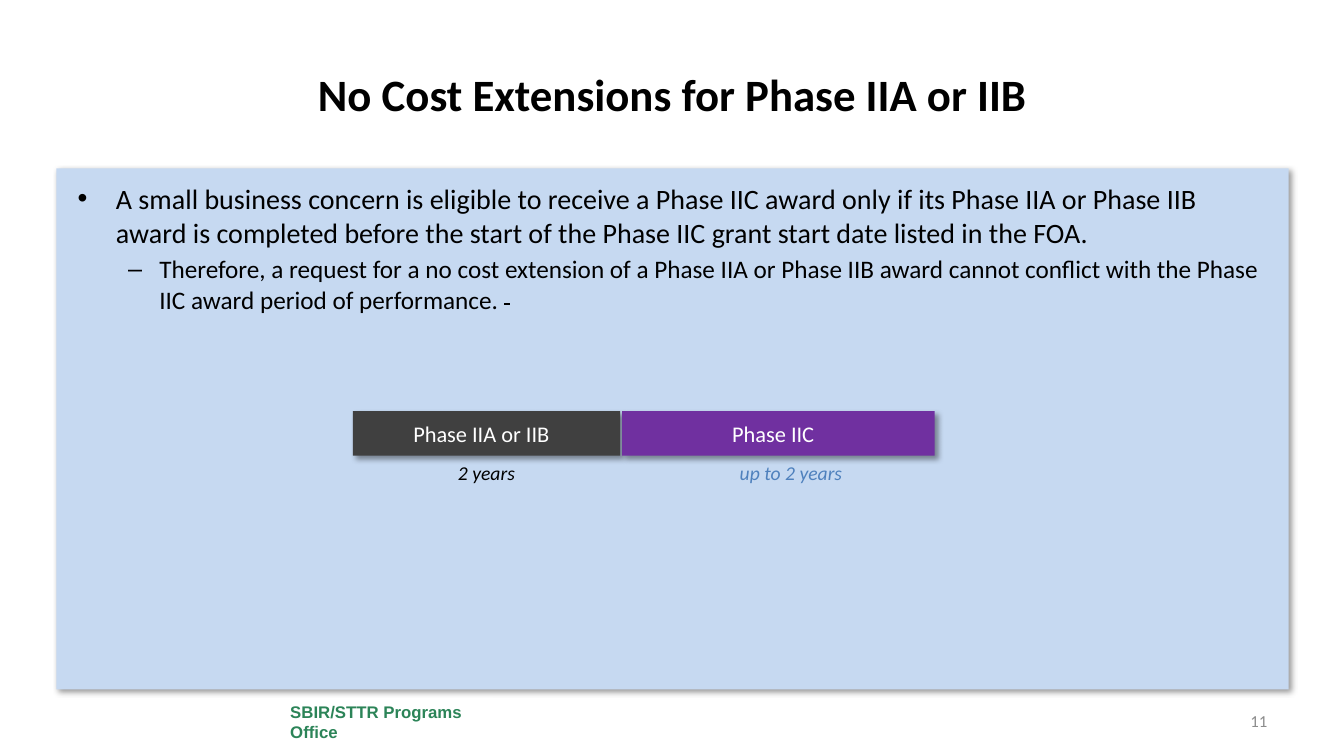
from lxml import etree
from pptx import Presentation
from pptx.dml.color import RGBColor
from pptx.enum.shapes import MSO_SHAPE
from pptx.enum.text import MSO_ANCHOR, MSO_AUTO_SIZE, PP_ALIGN
from pptx.oxml.ns import qn
from pptx.util import Inches, Pt

RECTANGLE = MSO_SHAPE.RECTANGLE
TOP, MIDDLE = MSO_ANCHOR.TOP, MSO_ANCHOR.MIDDLE
LEFT, CENTER, RIGHT = PP_ALIGN.LEFT, PP_ALIGN.CENTER, PP_ALIGN.RIGHT
NO_FIT = MSO_AUTO_SIZE.NONE

BLACK = RGBColor(0x00, 0x00, 0x00)
WHITE = RGBColor(0xFF, 0xFF, 0xFF)
PANEL_BLUE = RGBColor(0xC6, 0xD9, 0xF1)
OFFICE_GREEN = RGBColor(0x2C, 0x84, 0x58)
NUMBER_GRAY = RGBColor(0x8C, 0x8C, 0x8C)
DARK_GRAY = RGBColor(0x40, 0x40, 0x40)
PURPLE = RGBColor(0x70, 0x30, 0xA0)
LABEL_BLUE = RGBColor(0x4F, 0x81, 0xBD)

PHASE_TOP, PHASE_HEIGHT = 4.08, 0.44
PHASES = [
    ("Phase IIA or IIB", 3.5, 2.65, DARK_GRAY, "2 years", 4.17, BLACK),
    ("Phase IIC", 6.17, 3.1, PURPLE, "up to 2 years", 7.19, LABEL_BLUE),
]


def add_run(p, text, size, color, bold=False, italic=False, font="Calibri"):
    r = p.add_run()
    r.text = text
    r.font.name = font
    r.font.size = Pt(size)
    r.font.bold = bold
    r.font.italic = italic
    r.font.color.rgb = color
    return r


def write_line(s, text, size, color, align=CENTER, anchor=MIDDLE, **style):
    tf = s.text_frame
    tf.word_wrap = True
    tf.auto_size = NO_FIT
    tf.vertical_anchor = anchor
    p = tf.paragraphs[0]
    p.alignment = align
    add_run(p, text, size, color, **style)


def place(s, left, top, width, height):
    s.left, s.top = Inches(left), Inches(top)
    s.width, s.height = Inches(width), Inches(height)


def add_shadow(s):
    effects = s._element.spPr.find(qn("a:effectLst"))
    shadow = etree.SubElement(
        effects, qn("a:outerShdw"), blurRad=str(Pt(4)), dist=str(Pt(3)),
        dir="2700000", algn="tl", rotWithShape="0")
    color = etree.SubElement(shadow, qn("a:srgbClr"), val="000000")
    etree.SubElement(color, qn("a:alpha"), val="40000")


def add_rectangle(slide, left, top, width, height, fill, shadow=True):
    s = slide.shapes.add_shape(RECTANGLE, Inches(left), Inches(top),
                               Inches(width), Inches(height))
    s.fill.solid()
    s.fill.fore_color.rgb = fill
    s.line.fill.background()
    s.shadow.inherit = False
    if shadow:
        add_shadow(s)
    return s


def add_label(slide, left, top, width, height, text, size, color, **style):
    s = slide.shapes.add_textbox(Inches(left), Inches(top),
                                 Inches(width), Inches(height))
    write_line(s, text, size, color, **style)


def format_bullet(p, level, mark, margin, indent, before):
    p.level = level
    p.alignment = LEFT
    p.space_before = Pt(before)
    pPr = p._p.get_or_add_pPr()
    pPr.set("marL", str(Inches(margin)))
    pPr.set("indent", str(Inches(indent)))
    etree.SubElement(pPr, qn("a:buFont"), typeface="Arial")
    etree.SubElement(pPr, qn("a:buChar"), char=mark)


def fill_body(body):
    place(body, 0.67, 1.75, 12, 4.95)
    tf = body.text_frame
    tf.word_wrap = True
    tf.auto_size = NO_FIT
    tf.vertical_anchor = TOP
    p = tf.paragraphs[0]
    format_bullet(p, 0, "•", 0.38, -0.38, 0)
    add_run(p, "A small business concern is eligible to receive a Phase IIC "
               "award only if its Phase IIA or Phase IIB award is completed "
               "before the start of the Phase IIC grant start date listed in "
               "the FOA.", 20, BLACK)
    p = tf.add_paragraph()
    format_bullet(p, 1, "–", 0.81, -0.31, 3.6)
    add_run(p, "Therefore, a request for a no cost extension of a Phase IIA "
               "or Phase IIB award cannot conflict with the Phase IIC award "
               "period of performance. ", 18, BLACK)
    struck = add_run(p, " ", 18, BLACK)
    struck.font._element.set("strike", "sngStrike")


def add_phase(slide, name, left, width, fill, duration, label_left, color):
    bar = add_rectangle(slide, left, PHASE_TOP, width, PHASE_HEIGHT, fill)
    bar.text_frame.margin_right = Inches(0.2)
    write_line(bar, name, 16, WHITE)
    add_label(slide, label_left, PHASE_TOP + PHASE_HEIGHT, 1.31, 0.34,
              duration, 14, color, anchor=TOP, italic=True)


def main():
    prs = Presentation()
    prs.slide_width, prs.slide_height = Inches(13.33), Inches(7.5)
    slide = prs.slides.add_slide(prs.slide_layouts[1])
    title, body = slide.placeholders

    panel = add_rectangle(slide, 0.56, 1.67, 12.22, 5.17, PANEL_BLUE)
    title._element.addprevious(panel._element)
    office = add_rectangle(slide, 2.78, 6.92, 2.11, 0.48, WHITE, shadow=False)
    title._element.addprevious(office._element)
    write_line(office, "SBIR/STTR Programs Office", 12, OFFICE_GREEN,
               align=LEFT, bold=True, font="Arial")

    place(title, 0.67, 0.3, 12, 1.25)
    write_line(title, "No Cost Extensions for Phase IIA or IIB", 32, BLACK,
               bold=True)
    fill_body(body)
    add_label(slide, 10.56, 6.95, 2.11, 0.4, "11", 12, NUMBER_GRAY,
              align=RIGHT)
    for phase in PHASES:
        add_phase(slide, *phase)
    prs.save("out.pptx")


if __name__ == "__main__":
    main()
